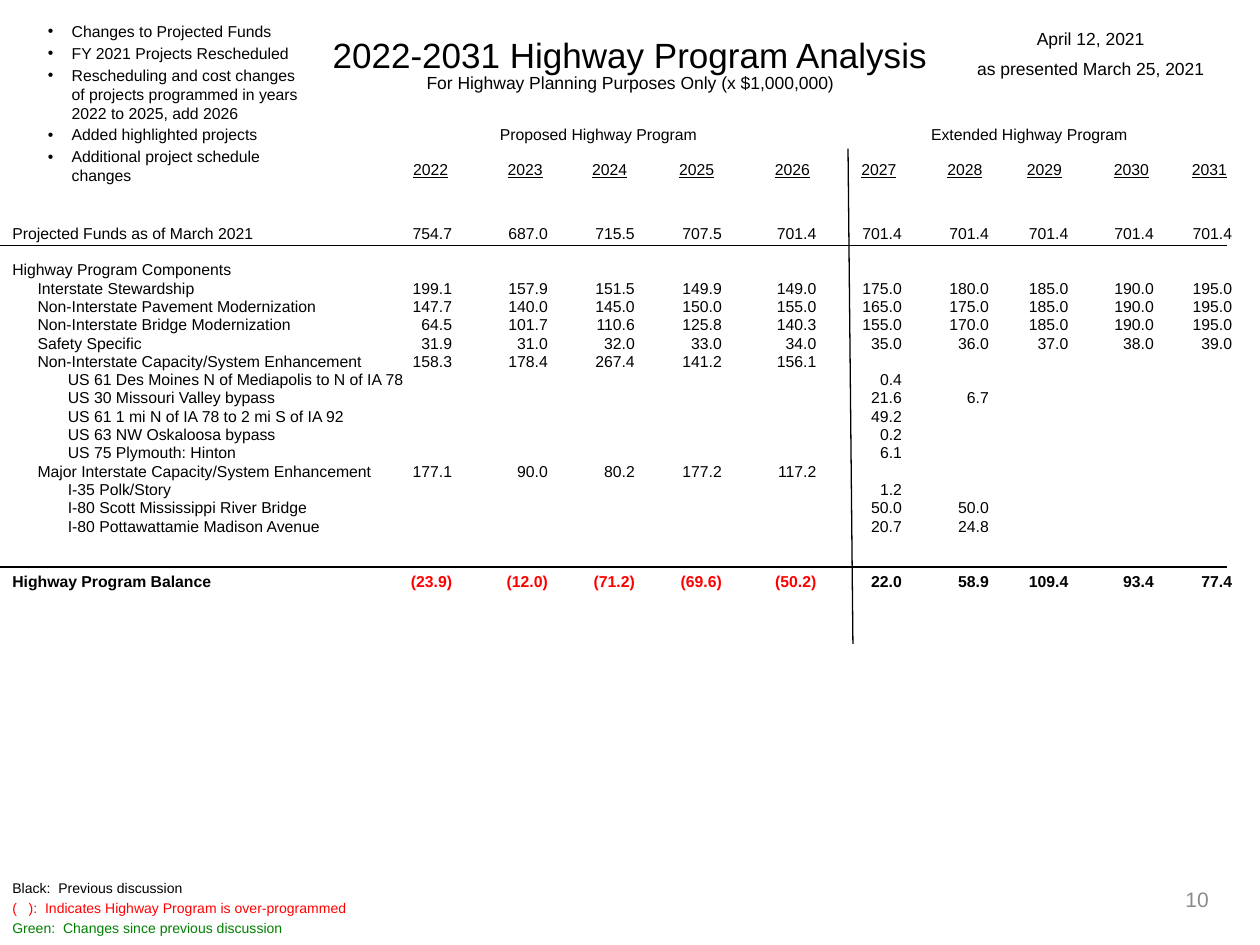
from lxml.etree import SubElement
from pptx import Presentation
from pptx.dml.color import RGBColor
from pptx.enum.shapes import MSO_CONNECTOR
from pptx.enum.text import MSO_ANCHOR, PP_ALIGN
from pptx.oxml.ns import qn
from pptx.util import Pt

BLACK, RED, GREEN, GRAY = "000000", "FF0000", "008000", "8C8C8C"
ROW_HEIGHT = 10.46

# Tab stops in points from the text edge
LABEL_TABS = [(14.4, "l"), (31.7, "l")]
VALUE_TABS = [(stop, "r") for stop in
              (251.3, 306, 355.7, 405.4, 459.4, 508.3, 558, 603.4, 652.3, 697)]
YEAR_TABS = [(stop, "ctr") for stop in
             (239, 293, 341.3, 391, 445.7, 495.2, 544.3, 589.7, 639.4, 684)]
HEADING_TABS = [(334.8, "ctr"), (581, "ctr")]

# Indent level, label, values from 2022 onwards
COMPONENTS = [
    (0, "Highway Program Components", ""),
    (1, "Interstate Stewardship",
     "199.1 157.9 151.5 149.9 149.0 175.0 180.0 185.0 190.0 195.0"),
    (1, "Non-Interstate Pavement Modernization",
     "147.7 140.0 145.0 150.0 155.0 165.0 175.0 185.0 190.0 195.0"),
    (1, "Non-Interstate Bridge Modernization",
     "64.5 101.7 110.6 125.8 140.3 155.0 170.0 185.0 190.0 195.0"),
    (1, "Safety Specific",
     "31.9 31.0 32.0 33.0 34.0 35.0 36.0 37.0 38.0 39.0"),
    (1, "Non-Interstate Capacity/System Enhancement",
     "158.3 178.4 267.4 141.2 156.1"),
    (2, "US 61 Des Moines N of Mediapolis to N of IA 78", "0.4"),
    (2, "US 30 Missouri Valley bypass", "21.6 6.7"),
    (2, "US 61 1 mi N of IA 78 to 2 mi S of IA 92", "49.2"),
    (2, "US 63 NW Oskaloosa bypass", "0.2"),
    (2, "US 75 Plymouth: Hinton", "6.1"),
    (1, "Major Interstate Capacity/System Enhancement",
     "177.1 90.0 80.2 177.2 117.2"),
    (2, "I-35 Polk/Story", "1.2"),
    (2, "I-80 Scott Mississippi River Bridge", "50.0 50.0"),
    (2, "I-80 Pottawattamie Madison Avenue", "20.7 24.8"),
]
PROJECTED = ["754.7", "687.0", "715.5", "707.5"] + ["701.4"] * 6
OVER_PROGRAMMED = ["(23.9)", "(12.0)", "(71.2)", "(69.6)", "(50.2)"]
REMAINING = ["22.0", "58.9", "109.4", "93.4", "77.4"]

CHANGES = [
    "Changes to Projected Funds",
    "FY 2021 Projects Rescheduled",
    "Rescheduling and cost changes of projects programmed in years 2022 to 2025, add 2026",
    "Added highlighted projects",
    "Additional project schedule changes",
]
LEGEND = [
    ("Black:  Previous discussion", BLACK),
    ("(   ):  Indicates Highway Program is over-programmed", RED),
    ("Green:  Changes since previous discussion", GREEN),
]


def rgb(value):
    return RGBColor.from_string(value)


def add_box(page, left, top, width, height, margin_top=3.6, margin_right=7.2):
    box = page.shapes.add_textbox(Pt(left), Pt(top), Pt(width), Pt(height))
    frame = box.text_frame
    frame.word_wrap = True
    frame.margin_top, frame.margin_right = Pt(margin_top), Pt(margin_right)
    return frame


def add_span(para, text, size=9, color=BLACK, bold=False, underline=False):
    span = para.add_run()
    span.text = text
    span.font.name = "Arial"
    span.font.size = Pt(size)
    span.font.bold = bold
    span.font.underline = underline
    span.font.color.rgb = rgb(color)


def add_para(frame, text="", align=PP_ALIGN.LEFT, before=0, line=None,
             tabs=(), bullet=False, **font):
    """Fill the empty first paragraph, or append another one."""
    para = frame.paragraphs[0]
    if para.runs:
        para = frame.add_paragraph()
    para.alignment = align
    para.space_before = Pt(before)
    if line:
        para.line_spacing = Pt(line)
    properties = para._p.get_or_add_pPr()
    if bullet:
        properties.set("marL", str(Pt(13.7)))
        properties.set("indent", str(-Pt(13.7)))
        SubElement(properties, qn("a:buFont"), typeface="Arial")
        SubElement(properties, qn("a:buChar"), char="•")
    if tabs:
        tab_list = SubElement(properties, qn("a:tabLst"))
        for stop, kind in tabs:
            SubElement(tab_list, qn("a:tab"), pos=str(Pt(stop)), algn=kind)
    if text:
        add_span(para, text, **font)
    return para


def add_line(page, x1, y1, x2, y2):
    line = page.shapes.add_connector(MSO_CONNECTOR.STRAIGHT, Pt(x1), Pt(y1), Pt(x2), Pt(y2))
    line.line.color.rgb = rgb(BLACK)
    line.line.width = Pt(0.75)
    SubElement(line._element.spPr, qn("a:effectLst"))


def add_funds(page):
    frame = add_box(page, 0, 113, 720, 242.6, margin_top=15.1)
    style = {"line": ROW_HEIGHT, "tabs": LABEL_TABS + VALUE_TABS}
    add_para(frame, "\t".join(["Projected Funds as of March 2021"] + PROJECTED),
             **{**style, "tabs": VALUE_TABS})
    for level, label, values in COMPONENTS:
        # Single projects start in 2027, after five empty years
        skipped = [""] * 5 if level == 2 else []
        cells = [label] + skipped + values.split()
        add_para(frame, "\t" * level + "\t".join(cells),
                 before=0 if level else ROW_HEIGHT, **style)
    balance = add_para(frame, "Highway Program Balance", bold=True,
                       before=2 * ROW_HEIGHT, line=ROW_HEIGHT, tabs=VALUE_TABS)
    for values, color in ((OVER_PROGRAMMED, RED), (REMAINING, BLACK)):
        add_span(balance, "\t" + "\t".join(values), color=color, bold=True)


def add_years(page):
    frame = add_box(page, 0, 71.3, 720, 35.3, margin_top=0)
    add_para(frame, "\tProposed Highway Program\tExtended Highway Program", tabs=HEADING_TABS)
    years = add_para(frame, before=9.1, tabs=YEAR_TABS)
    for year in range(2022, 2032):
        add_span(years, "\t")
        add_span(years, str(year), underline=True)


def add_title(page):
    frame = add_box(page, 0, 3.6, 720, 50.4, margin_top=19.5)
    add_para(frame, "2022-2031 Highway Program Analysis", size=20, line=20,
             align=PP_ALIGN.CENTER)
    add_para(frame, "For Highway Planning Purposes Only (x $1,000,000)", size=10,
             line=9.9, align=PP_ALIGN.CENTER)


def add_notes_around(page):
    # Page number
    frame = add_box(page, 530, 499.7, 167.8, 28.8)
    frame.vertical_anchor = MSO_ANCHOR.MIDDLE
    add_para(frame, "10", size=12, color=GRAY, align=PP_ALIGN.RIGHT)

    # Colour legend
    frame = add_box(page, 0, 499, 275.8, 40.3)
    for text, color in LEGEND:
        add_para(frame, text, size=8, color=color, before=1.9)

    # Dates
    frame = add_box(page, 542.9, 12.2, 160.6, 37.4)
    for text in ("April 12, 2021", "as presented March 25, 2021"):
        add_para(frame, text, size=10, before=5.6, align=PP_ALIGN.CENTER)

    # List of changes
    frame = add_box(page, 20.2, 8.6, 157.7, 116.6, margin_right=4)
    for text in CHANGES:
        add_para(frame, text, before=1.7, line=10.86, bullet=True)


def main():
    deck = Presentation()
    deck.slide_width, deck.slide_height = Pt(720), Pt(540)
    page = deck.slides.add_slide(deck.slide_layouts[6])
    add_funds(page)
    add_years(page)
    add_title(page)
    # Rules above and below the components, and between the two programs
    for y in (140.4, 324):
        add_line(page, 0, y, 701.3, y)
    add_line(page, 487.4, 367.9, 484.6, 85)
    add_notes_around(page)
    deck.save("out.pptx")


if __name__ == "__main__":
    main()
